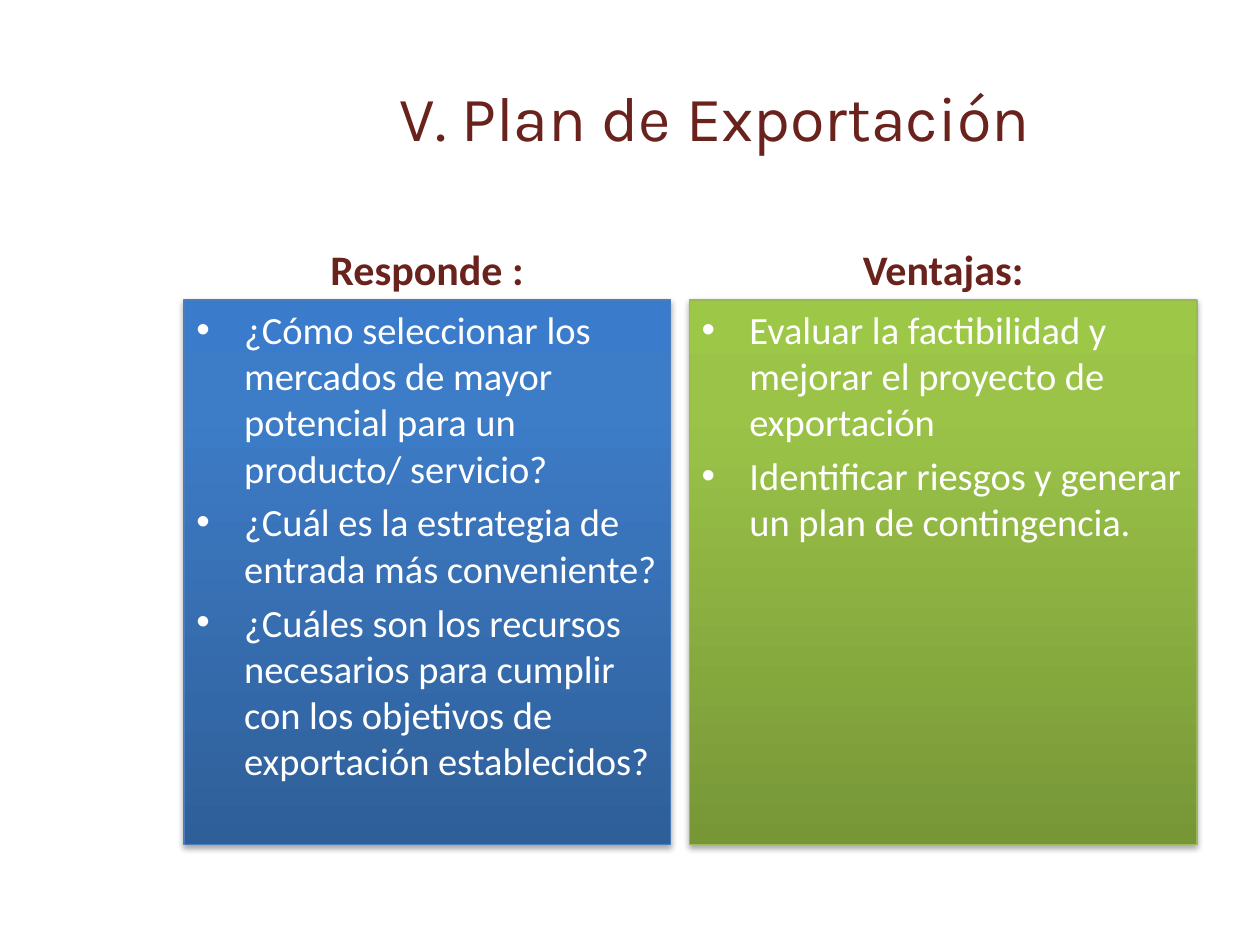
import pptx
import pptx.util
import pptx.dml.color
import pptx.enum.shapes
import pptx.enum.text
import pptx.oxml
import pptx.oxml.ns

Inches = pptx.util.Inches
Pt = pptx.util.Pt
ALIGN = pptx.enum.text.PP_ALIGN
ANCHOR = pptx.enum.text.MSO_ANCHOR

COLORS = {
    "heading": "6A221D", "text": "FFFFFF", "shadow": "000000",
    "blue_dark": "2F5F99", "blue_mid": "3D7CC7", "blue_light": "3A7CCB", "blue_line": "4B7EBC",
    "green_dark": "779737", "green_mid": "9BC348", "green_light": "9DC746", "green_line": "98B955",
}
TITLE = "V. Plan de Exportación"
COLUMNS = [
    {"heading": "Responde :", "hue": "blue", "left": 1.46, "width": 3.86, "bullets": [
        "¿Cómo seleccionar los mercados de mayor potencial para un producto/ servicio?",
        "¿Cuál es la estrategia de entrada más conveniente?",
        "¿Cuáles son los recursos necesarios para cumplir con los objetivos de exportación establecidos?",
    ]},
    {"heading": "Ventajas:", "hue": "green", "left": 5.47, "width": 4.03, "bullets": [
        "Evaluar la factibilidad y mejorar el proyecto de exportación",
        "Identificar riesgos y generar un plan de contingencia.",
    ]},
]
HEADING_TOP, HEADING_HEIGHT, PANEL_HEIGHT = 1.68, 0.7, 4.32
INDENT = Inches(0.38)


def rgb(name):
    return pptx.dml.color.RGBColor.from_string(COLORS[name])


def element(markup):
    tag, rest = markup.split(" ", 1)
    return pptx.oxml.parse_xml(f"{tag} {pptx.oxml.ns.nsdecls('a')} {rest}")


def write(paragraph, text, font, size, color, align, bold=False):
    paragraph.alignment = align
    run = paragraph.add_run()
    run.text = text
    run.font.name = font
    run.font.size = Pt(size)
    run.font.bold = bold
    run.font.color.rgb = rgb(color)


def add_heading(slide, column):
    box = slide.shapes.add_textbox(Inches(column["left"]), Inches(HEADING_TOP),
                                   Inches(column["width"]), Inches(HEADING_HEIGHT))
    frame = box.text_frame
    frame.word_wrap = True
    frame.vertical_anchor = ANCHOR.BOTTOM
    write(frame.paragraphs[0], column["heading"], "Calibri", 24, "heading", ALIGN.CENTER, True)


def style_panel(panel, hue):
    stops = "".join(
        f'<a:gs pos="{position * 1000}"><a:srgbClr val="{COLORS[f"{hue}_{tone}"]}"/></a:gs>'
        for position, tone in [(0, "dark"), (80, "mid"), (100, "light")])
    properties = panel.element.spPr
    properties.prstGeom.addnext(element(
        f'<a:gradFill rotWithShape="1"><a:gsLst>{stops}</a:gsLst>'
        '<a:lin ang="16200000" scaled="0"/></a:gradFill>'))
    panel.line.color.rgb = rgb(f"{hue}_line")
    panel.line.width = Pt(0.75)
    panel.shadow.inherit = False
    properties.find(pptx.oxml.ns.qn("a:effectLst")).append(element(
        f'<a:outerShdw blurRad="{Pt(3.1)}" dist="{Pt(1.8)}" dir="5400000" rotWithShape="0">'
        f'<a:srgbClr val="{COLORS["shadow"]}"><a:alpha val="35000"/></a:srgbClr></a:outerShdw>'))


def add_panel(slide, column):
    panel = slide.shapes.add_shape(
        pptx.enum.shapes.MSO_SHAPE.RECTANGLE, Inches(column["left"]),
        Inches(HEADING_TOP + HEADING_HEIGHT), Inches(column["width"]), Inches(PANEL_HEIGHT))
    style_panel(panel, column["hue"])
    frame = panel.text_frame
    frame.word_wrap = True
    frame.vertical_anchor = ANCHOR.TOP
    for index, text in enumerate(column["bullets"]):
        paragraph = frame.add_paragraph() if index else frame.paragraphs[0]
        properties = paragraph._p.get_or_add_pPr()
        properties.set("marL", str(INDENT))
        properties.set("indent", str(-INDENT))
        properties.append(element('<a:buFont typeface="Arial"/>'))
        properties.append(element('<a:buChar char="•"/>'))
        paragraph.space_before = Pt(4.4 if index else 0)
        write(paragraph, text, "Calibri", 22, "text", ALIGN.LEFT)


def main():
    """Build the export plan slide."""
    presentation = pptx.Presentation()
    presentation.slide_width, presentation.slide_height = Inches(10), Inches(7.5)
    slide = presentation.slides.add_slide(presentation.slide_layouts.get_by_name("Title Only"))
    title = slide.shapes.title
    title.left, title.top, title.width, title.height = map(Inches, (1.85, 0.3, 7.65, 1.25))
    title.text_frame.vertical_anchor = ANCHOR.MIDDLE
    write(title.text_frame.paragraphs[0], TITLE, "Karla", 36, "heading", ALIGN.CENTER)
    for column in COLUMNS:
        add_heading(slide, column)
        add_panel(slide, column)
    presentation.save("out.pptx")


if __name__ == "__main__":
    main()
